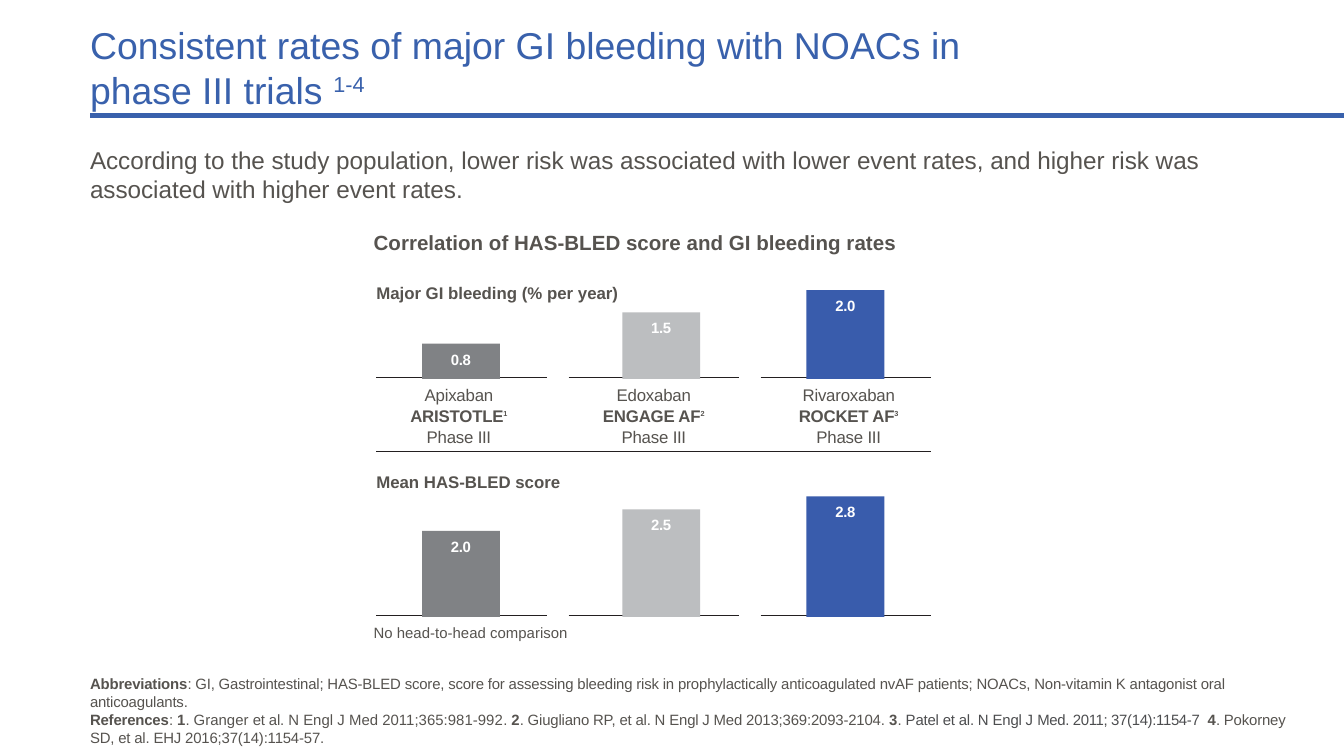
from dataclasses import dataclass

from lxml import etree
from pptx import Presentation
from pptx.dml.color import RGBColor
from pptx.enum.shapes import MSO_CONNECTOR, MSO_SHAPE
from pptx.enum.text import MSO_ANCHOR, MSO_AUTO_SIZE, PP_ALIGN
from pptx.oxml.ns import qn
from pptx.util import Inches, Pt

STRAIGHT, RECTANGLE = MSO_CONNECTOR.STRAIGHT, MSO_SHAPE.RECTANGLE
LEFT, CENTER = PP_ALIGN.LEFT, PP_ALIGN.CENTER
TOP, BOTTOM = MSO_ANCHOR.TOP, MSO_ANCHOR.BOTTOM
NO_AUTOFIT = MSO_AUTO_SIZE.NONE

FONT = "Arial"
TITLE_BLUE = RGBColor(0x39, 0x61, 0xAC)
TEXT_GREY = RGBColor(0x56, 0x53, 0x4F)
CITATION_GREY = RGBColor(0x4C, 0x4D, 0x4F)
AXIS_BLACK = RGBColor(0x23, 0x1F, 0x20)
DARK_BAR = RGBColor(0x80, 0x82, 0x85)
LIGHT_BAR = RGBColor(0xBC, 0xBE, 0xC0)
BLUE_BAR = RGBColor(0x39, 0x5C, 0xAC)
WHITE = RGBColor(0xFF, 0xFF, 0xFF)

SLIDE_WIDTH = 10
SLIDE_HEIGHT = SLIDE_WIDTH * 9 / 16
MARGIN, CONTENT_WIDTH = 0.67, 9.06
CHART_LEFT, CHART_WIDTH = 2.8, 4.13
AXIS_WIDTH = 1.27
AXIS_PITCH = (CHART_WIDTH - AXIS_WIDTH) / 2
LABEL_WIDTH, LABEL_PITCH = 1.13, 1.45
BAR_WIDTH, BAR_OVERLAP = 0.58, 0.01


@dataclass
class Trial:
    drug: str
    study: str
    reference: str
    fill: RGBColor
    bleeding: float
    score: float
    bar_offset: float


TRIALS = [
    Trial("Apixaban", "ARISTOTLE", "1", DARK_BAR, 0.8, 2.0, 0.34),
    Trial("Edoxaban", "ENGAGE AF", "2", LIGHT_BAR, 1.5, 2.5, 1.83),
    Trial("Rivaroxaban", "ROCKET AF", "3", BLUE_BAR, 2.0, 2.8, 3.2),
]

# Each run: text, bold, letter spacing in points, colour
ABBREVIATIONS = [
    ("Abbreviations", True, -0.1, TEXT_GREY),
    (": GI, Gastrointestinal; HAS-BLED score, score for assessing bleeding risk in "
     "prophylactically anticoagulated nvAF patients; NOACs, Non-vitamin K antagonist "
     "oral anticoagulants.", False, -0.1, TEXT_GREY),
]
REFERENCES = [
    ("References", True, -0.1, TEXT_GREY),
    (": ", False, -0.1, TEXT_GREY),
    ("1", True, -0.1, TEXT_GREY),
    (". ", False, -0.1, TEXT_GREY),
    ("Granger ", False, 0, TEXT_GREY),
    ("et al. ", False, -0.1, TEXT_GREY),
    ("N Engl J Med 2011;365:981‑992", False, 0, TEXT_GREY),
    (". ", False, -0.1, TEXT_GREY),
    ("2", True, -0.1, TEXT_GREY),
    (". Giugliano RP, et al. N Engl J Med 2013;369:2093‑2104. ", False, -0.1, TEXT_GREY),
    ("3", True, -0.1, TEXT_GREY),
    (". ", False, -0.1, TEXT_GREY),
    ("Patel et al. N Engl J ", False, -0.1, CITATION_GREY),
    ("Med. 2011; 37(14):1154-7  ", False, -0.2, CITATION_GREY),
    ("4", True, -0.1, TEXT_GREY),
    (". Pokorney SD, et al. EHJ 2016;37(14):1154-57.", False, -0.1, TEXT_GREY),
]


def add_run(paragraph, text, size, color=TEXT_GREY, bold=False, spacing=0, baseline=0):
    """Letter spacing is in points, baseline shift in percent."""
    run = paragraph.add_run()
    run.text = text
    run.font.name = FONT
    run.font.size = Pt(size)
    run.font.bold = bold
    run.font.color.rgb = color
    properties = run.font._element
    if spacing:
        properties.set("spc", str(round(spacing * 100)))
    if baseline:
        properties.set("baseline", str(baseline * 1000))


def format_frame(frame, anchor=TOP, top_inset=0):
    frame.word_wrap = True
    frame.auto_size = NO_AUTOFIT
    frame.vertical_anchor = anchor
    frame.margin_left = frame.margin_right = frame.margin_bottom = 0
    frame.margin_top = Inches(top_inset)


def add_text_box(slide, left, top, width, height, top_inset=0):
    frame = slide.shapes.add_textbox(
        Inches(left), Inches(top), Inches(width), Inches(height)).text_frame
    format_frame(frame, top_inset=top_inset)
    return frame


def add_rule(slide, left, top, width, color, weight):
    rule = slide.shapes.add_connector(
        STRAIGHT, Inches(left), Inches(top), Inches(left + width), Inches(top))
    rule.line.color.rgb = color
    rule.line.width = Pt(weight)
    etree.SubElement(rule._element.spPr, qn("a:effectLst"))


def add_title(slide, left, top, width, height):
    add_rule(slide, left, top + 0.7, SLIDE_WIDTH - left, TITLE_BLUE, 2.25)
    title = slide.shapes.title
    title.left, title.top = Inches(left), Inches(top)
    title.width, title.height = Inches(width), Inches(height)
    format_frame(title.text_frame, BOTTOM)
    paragraph = title.text_frame.paragraphs[0]
    paragraph.alignment = LEFT
    add_run(paragraph, "Consistent rates of major GI bleeding with NOACs in ", 20, TITLE_BLUE)
    paragraph.add_line_break()
    add_run(paragraph, "phase III trials ", 20, TITLE_BLUE)
    add_run(paragraph, "1-4", 20, TITLE_BLUE, baseline=30)


def add_line_of_text(slide, left, top, width, height, text, size, bold=False, top_inset=0):
    frame = add_text_box(slide, left, top, width, height, top_inset)
    add_run(frame.paragraphs[0], text, size, bold=bold)
    return frame


def add_bar(slide, left, bottom, height, value, fill):
    bar = slide.shapes.add_shape(
        RECTANGLE, Inches(left), Inches(bottom - height), Inches(BAR_WIDTH), Inches(height))
    bar.shadow.inherit = False
    bar.fill.solid()
    bar.fill.fore_color.rgb = fill
    bar.line.fill.background()
    format_frame(bar.text_frame, top_inset=0.05)
    paragraph = bar.text_frame.paragraphs[0]
    paragraph.alignment = CENTER
    paragraph.space_before = Pt(3.3)
    add_run(paragraph, f"{value:.1f}", 8, WHITE, bold=True, spacing=-0.2)


def add_bar_panel(slide, left, top, height, caption, values, inches_per_unit):
    """Caption at the top of the box, one short axis per trial at its foot."""
    frame = add_line_of_text(slide, left, top, 2.63, 0.17, caption, 9, True, 0.01)
    frame.paragraphs[0].space_before = Pt(1)
    axis_top = top + height
    for column, (trial, value) in enumerate(zip(TRIALS, values)):
        add_rule(slide, left + column * AXIS_PITCH, axis_top, AXIS_WIDTH, AXIS_BLACK, 0.3)
        add_bar(slide, left + trial.bar_offset, axis_top + BAR_OVERLAP,
                value * inches_per_unit, value, trial.fill)


def add_trial_labels(slide, left, top, width, height):
    for column, trial in enumerate(TRIALS):
        frame = add_text_box(slide, left + 0.05 + column * LABEL_PITCH, top,
                             LABEL_WIDTH, 0.47, 0.01)
        drug, study, phase = (frame.paragraphs[0], frame.add_paragraph(),
                              frame.add_paragraph())
        for paragraph, space in ((drug, 1), (study, 0.4), (phase, 0.4)):
            paragraph.alignment = CENTER
            paragraph.space_before = Pt(space)
        add_run(drug, trial.drug, 9, spacing=-0.1)
        add_run(study, trial.study, 9, bold=True, spacing=-0.1)
        add_run(study, trial.reference, 6.8, bold=True, spacing=-0.4, baseline=43)
        add_run(phase, "Phase ", 9, spacing=-0.1)
        add_run(phase, "III", 9, spacing=-0.2)
    add_rule(slide, left, top + height, width, AXIS_BLACK, 0.3)


def add_footnotes(slide, left, top, width, height):
    frame = add_text_box(slide, left, top, width, height)
    for paragraph, runs in ((frame.paragraphs[0], ABBREVIATIONS),
                            (frame.add_paragraph(), REFERENCES)):
        for text, bold, spacing, color in runs:
            add_run(paragraph, text, 8, color, bold, spacing)


def main():
    presentation = Presentation()
    presentation.slide_width = Inches(SLIDE_WIDTH)
    presentation.slide_height = Inches(SLIDE_HEIGHT)
    slide = presentation.slides.add_slide(presentation.slide_layouts[5])

    add_title(slide, MARGIN, 0.16, CONTENT_WIDTH, 0.67)
    add_line_of_text(slide, MARGIN, 1.08, CONTENT_WIDTH, 0.33,
                     "According to the study population, lower risk was associated with lower "
                     "event rates, and higher risk was associated with higher event rates.", 13)
    add_line_of_text(slide, 2.78, 1.71, 5.42, 0.33,
                     "Correlation of HAS-BLED score and GI bleeding rates", 11, True)
    add_bar_panel(slide, CHART_LEFT, 2.09, 0.72, "Major GI bleeding (% per year)",
                  [trial.bleeding for trial in TRIALS], 0.33)
    add_trial_labels(slide, CHART_LEFT, 2.85, CHART_WIDTH, 0.51)
    add_bar_panel(slide, CHART_LEFT, 3.5, 1.08, "Mean HAS-BLED score",
                  [trial.score for trial in TRIALS], 0.32)
    add_line_of_text(slide, 2.78, 4.64, 2.53, 0.17, "No head-to-head comparison", 8)
    add_footnotes(slide, MARGIN, 5.02, CONTENT_WIDTH, 0.25)
    presentation.save("out.pptx")


if __name__ == "__main__":
    main()
